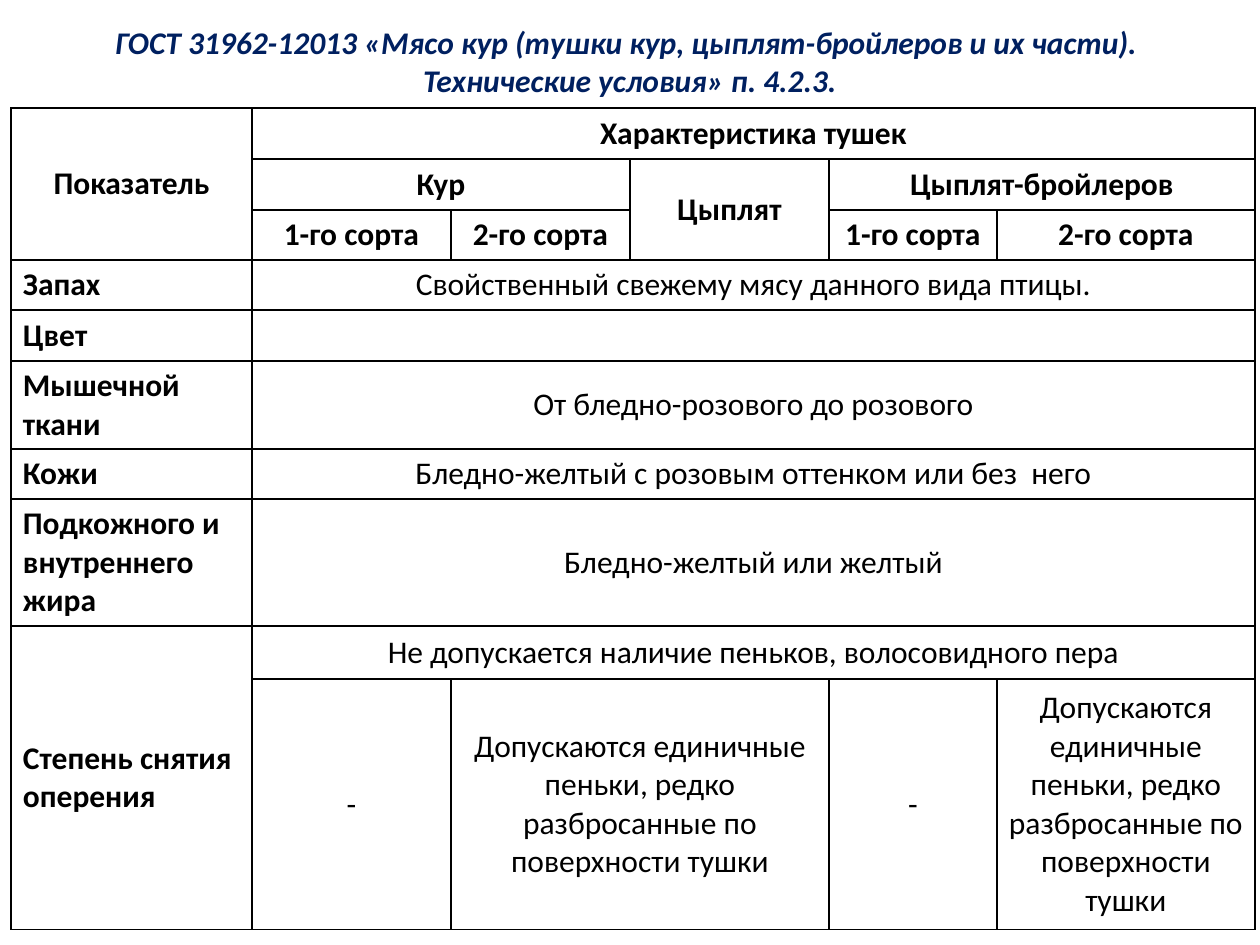
from dataclasses import dataclass

from lxml import etree
from pptx import Presentation
from pptx import util as u
from pptx.dml.color import RGBColor
from pptx.enum import text
from pptx.oxml import ns

SCALE = 914400 / 126
FONT = "Calibri"
NAVY, BLACK = "002060", "000000"
LEFT, CENTER = text.PP_ALIGN.LEFT, text.PP_ALIGN.CENTER

COLUMN_WIDTHS = [241, 199, 179, 199, 168, 258]
ROW_HEIGHTS = [51, 51, 50, 50, 51, 88, 50, 127, 53, 251]
TITLE_LINES = [
    "ГОСТ 31962-12013 «Мясо кур (тушки кур, цыплят-бройлеров и их части). ",
    "Технические условия» п. 4.2.3.",
]
FEATHERS = "Допускаются единичные пеньки, редко разбросанные по поверхности тушки"
FIRST_GRADE, SECOND_GRADE = "1-го сорта", "2-го сорта"


@dataclass
class Entry:
    row: int
    column: int
    words: str
    rows: int = 1
    columns: int = 1
    bold: bool = False
    align: text.PP_ALIGN = CENTER


def heading(row: int, column: int, words: str, rows: int = 1, columns: int = 1) -> Entry:
    return Entry(row, column, words, rows, columns, bold=True)


def label(row: int, words: str, rows: int = 1) -> Entry:
    return Entry(row, 0, words, rows, bold=True, align=LEFT)


HEADINGS = [
    heading(0, 0, "Показатель", rows=3),
    heading(0, 1, "Характеристика тушек", columns=5),
    heading(1, 1, "Кур", columns=2),
    heading(1, 3, "Цыплят", rows=2),
    heading(1, 4, "Цыплят-бройлеров", columns=2),
    *[heading(2, column, FIRST_GRADE) for column in (1, 4)],
    *[heading(2, column, SECOND_GRADE) for column in (2, 5)],
]
PROPERTIES = [
    ("Запах", "Свойственный свежему мясу данного вида птицы."),
    ("Цвет", ""),
    ("Мышечной ткани", "От бледно-розового до розового"),
    ("Кожи", "Бледно-желтый с розовым оттенком или без  него"),
    ("Подкожного и внутреннего жира", "Бледно-желтый или желтый"),
    ("Степень снятия оперения", "Не допускается наличие пеньков, волосовидного пера"),
]
DETAILS = [
    Entry(9, 1, "-"),
    Entry(9, 2, FEATHERS, columns=2),
    Entry(9, 4, "-"),
    Entry(9, 5, FEATHERS),
]


def px(length: int) -> int:
    return round(length * SCALE)


def color(value: str) -> RGBColor:
    return RGBColor.from_string(value)


def write(para, words: str, ink: str, bold: bool, italic: bool, align: text.PP_ALIGN) -> None:
    para.alignment = align
    para.font.size = u.Pt(18)
    if not words:
        return
    span = para.add_run()
    span.text = words
    font = span.font
    font.name, font.size, font.bold, font.italic = FONT, u.Pt(18), bold, italic
    font.color.rgb = color(ink)


def add_title(page) -> None:
    box = page.shapes.title
    box.left, box.top, box.width, box.height = px(0), px(17), px(1260), px(89)
    frame = box.text_frame
    frame.word_wrap = True
    frame.auto_size = text.MSO_AUTO_SIZE.SHAPE_TO_FIT_TEXT
    frame.vertical_anchor = text.MSO_ANCHOR.TOP
    for index, words in enumerate(TITLE_LINES):
        para = frame.add_paragraph() if index else frame.paragraphs[0]
        write(para, words, NAVY, True, True, CENTER)


def style_cell(cell) -> None:
    properties = cell._tc.get_or_add_tcPr()
    for side in ("lnL", "lnR", "lnT", "lnB"):
        border = etree.SubElement(properties, ns.qn(f"a:{side}"), w=str(u.Pt(1)))
        fill = etree.SubElement(border, ns.qn("a:solidFill"))
        etree.SubElement(fill, ns.qn("a:srgbClr"), val=BLACK)
    cell.fill.background()
    cell.vertical_anchor = text.MSO_ANCHOR.MIDDLE
    cell.margin_left = cell.margin_right = px(12)
    cell.margin_top = cell.margin_bottom = px(6)


def fill_cell(table, entry: Entry) -> None:
    cell = table.cell(entry.row, entry.column)
    if entry.rows > 1 or entry.columns > 1:
        last = table.cell(entry.row + entry.rows - 1, entry.column + entry.columns - 1)
        cell.merge(last)
    write(cell.text_frame.paragraphs[0], entry.words, BLACK, entry.bold, False, entry.align)


def add_requirements(page) -> None:
    table = page.shapes.add_table(
        len(ROW_HEIGHTS), len(COLUMN_WIDTHS), px(11), px(108),
        px(sum(COLUMN_WIDTHS)), px(sum(ROW_HEIGHTS)),
    ).table
    table.first_row = table.horz_banding = False
    for column, width in zip(table.columns, COLUMN_WIDTHS):
        column.width = px(width)
    for row, height in zip(table.rows, ROW_HEIGHTS):
        row.height = px(height)
    for cell in table.iter_cells():
        style_cell(cell)
    for entry in HEADINGS + DETAILS:
        fill_cell(table, entry)
    for row, (name, value) in enumerate(PROPERTIES, start=3):
        fill_cell(table, label(row, name, rows=2 if row == 8 else 1))
        fill_cell(table, Entry(row, 1, value, columns=5))


def main() -> None:
    deck = Presentation()
    deck.slide_width, deck.slide_height = px(1260), px(945)
    page = deck.slides.add_slide(deck.slide_layouts[5])
    add_title(page)
    add_requirements(page)
    deck.save("out.pptx")


if __name__ == "__main__":
    main()
